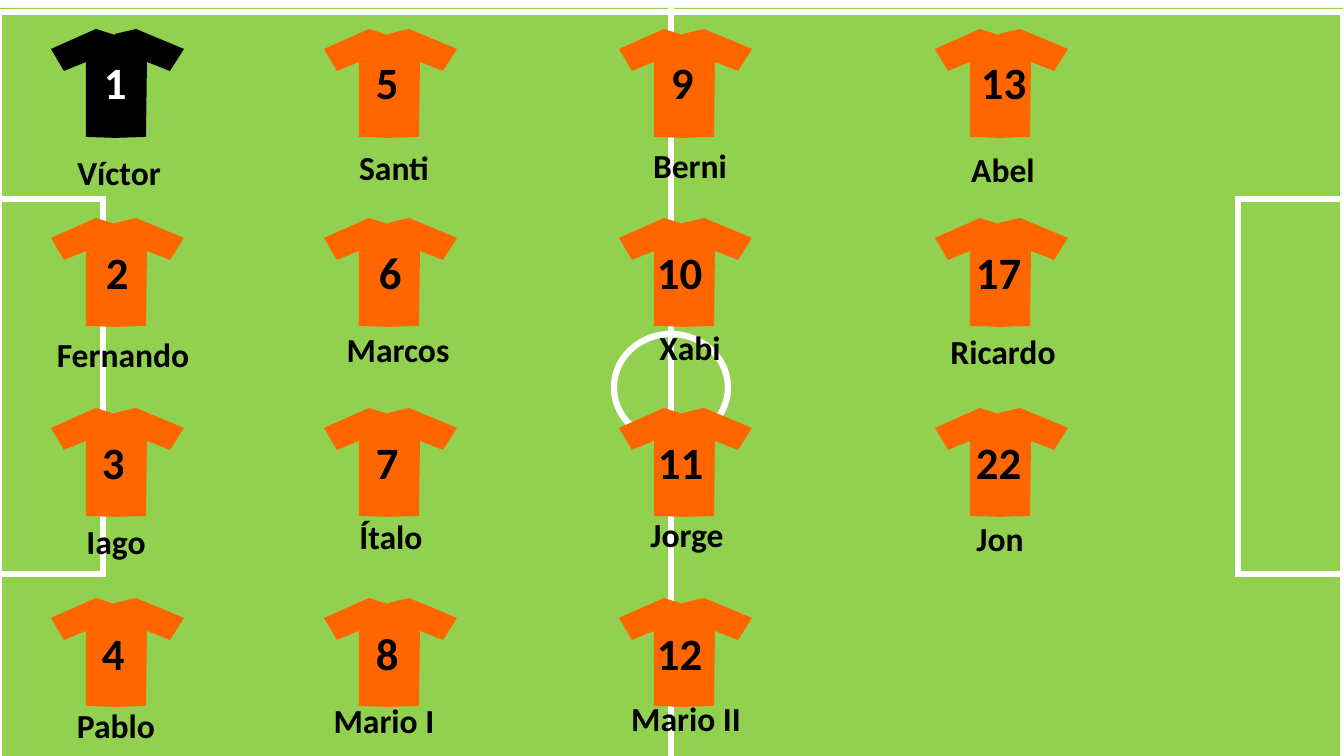
from lxml.etree import SubElement
from pptx import Presentation
from pptx.dml.color import RGBColor
from pptx.enum.shapes import MSO_CONNECTOR, MSO_SHAPE
from pptx.enum.text import MSO_AUTO_SIZE, PP_ALIGN
from pptx.oxml.ns import qn
from pptx.util import Pt

PX = 9071
SLIDE_WIDTH, SLIDE_HEIGHT = 1344, 756
GREEN, WHITE, BLACK, ORANGE = "92D050", "FFFFFF", "000000", "FF6600"
FONT = "Calibri"

GRASS = (-1, 8, 1344, 757)
MARKINGS = [
    (MSO_SHAPE.OVAL, (614, 334, 114, 107)),
    (MSO_SHAPE.RECTANGLE, (-2, 199, 105, 375)),
    (MSO_SHAPE.RECTANGLE, (1238, 199, 105, 375)),
    (MSO_SHAPE.RECTANGLE, (-1, 12, 1344, 753)),
]

SHIRT_HALVES = [
    [(0, 20), (13, 42), (35, 33), (35, 108), (67, 109), (64, 6), (45, 0)],
    [(133, 20), (119, 42), (96, 33), (95, 108), (62, 109), (64, 5), (85, 0)],
]

SHIRT_TOPS = [29, 218, 408, 598]
NUMBER_TOPS = [50, 240, 430, 621]
NAME_STEPS = [0, 182, 369, 553]

COLUMNS = [
    {"shirt_left": 51, "name_top": 147, "players": [
        ("1", 94, "Víctor", 119), ("2", 96, "Fernando", 123),
        ("3", 92, "Iago", 116), ("4", 92, "Pablo", 116)]},
    {"shirt_left": 324, "name_top": 142, "players": [
        ("5", 366, "Santi", 394), ("6", 369, "Marcos", 398),
        ("7", 366, "Ítalo", 391), ("8", 366, "Mario I", 384)]},
    {"shirt_left": 619, "name_top": 140, "players": [
        ("9", 661, "Berni", 690), ("10", 647, "Xabi", 690),
        ("11", 648, "Jorge", 687), ("12", 647, "Mario II", 686)]},
    {"shirt_left": 935, "name_top": 144, "players": [
        ("13", 971, "Abel", 1003), ("17", 966, "Ricardo", 1003),
        ("22", 966, "Jon", 1000)]},
]
GOALKEEPER = "1"


def color(value):
    return RGBColor.from_string(value)


def emu(*lengths):
    return [length * PX for length in lengths]


def draw_line(line):
    line.color.rgb = color(WHITE)
    line.width = Pt(4.5)


def paint(shape, fill=None, outlined=False):
    shape.shadow.inherit = False
    if fill:
        shape.fill.solid()
        shape.fill.fore_color.rgb = color(fill)
    else:
        shape.fill.background()
    if outlined:
        draw_line(shape.line)
        outline = shape._element.spPr.find(qn("a:ln"))
        SubElement(outline, qn("a:miter"), lim="800000")
    else:
        shape.line.fill.background()


def add_pitch(slide):
    shapes = slide.shapes.add_group_shape().shapes
    grass = shapes.add_shape(MSO_SHAPE.RECTANGLE, *emu(*GRASS))
    paint(grass, fill=GREEN)
    left, top, width, height = GRASS
    middle = left + width // 2
    halfway = shapes.add_connector(
        MSO_CONNECTOR.STRAIGHT, *emu(middle, top, middle, top + height))
    halfway.begin_connect(grass, 0)
    halfway.end_connect(grass, 2)
    draw_line(halfway.line)
    SubElement(halfway._element.spPr, qn("a:effectLst"))
    for kind, box in MARKINGS:
        paint(shapes.add_shape(kind, *emu(*box)), outlined=True)


def add_shirt(slide, left, top, fill):
    shapes = slide.shapes.add_group_shape().shapes
    for half in SHIRT_HALVES:
        points = [(left + x, top + y) for x, y in half]
        builder = shapes.build_freeform(*points[0], scale=PX)
        builder.add_line_segments(points[1:], close=True)
        paint(builder.convert_to_shape(), fill=fill)


def add_label(slide, text, box, size, font_color, alignment):
    frame = slide.shapes.add_textbox(*emu(*box)).text_frame
    frame.word_wrap = False
    frame.auto_size = MSO_AUTO_SIZE.SHAPE_TO_FIT_TEXT
    paragraph = frame.paragraphs[0]
    paragraph.alignment = alignment
    run = paragraph.add_run()
    run.text = text
    run.font.name = FONT
    run.font.size = Pt(size)
    run.font.bold = True
    run.font.color.rgb = color(font_color)


def add_player(slide, column, row, player):
    number, number_left, name, name_center = player
    keeper = number == GOALKEEPER
    add_shirt(slide, column["shirt_left"], SHIRT_TOPS[row],
              BLACK if keeper else ORANGE)
    number_width = 47 if len(number) == 1 else 67
    add_label(slide, number, (number_left, NUMBER_TOPS[row], number_width, 64),
              32, WHITE if keeper else BLACK, PP_ALIGN.LEFT)
    half_width = 54 if len(name) < 6 else 78
    name_box = (name_center - half_width, column["name_top"] + NAME_STEPS[row],
                2 * half_width, 50)
    add_label(slide, name, name_box, 24, BLACK, PP_ALIGN.CENTER)


def main():
    presentation = Presentation()
    presentation.slide_width, presentation.slide_height = emu(
        SLIDE_WIDTH, SLIDE_HEIGHT)
    slide = presentation.slides.add_slide(presentation.slide_layouts[6])
    add_pitch(slide)
    for column in COLUMNS:
        for row, player in enumerate(column["players"]):
            add_player(slide, column, row, player)
    presentation.save("out.pptx")


if __name__ == "__main__":
    main()
